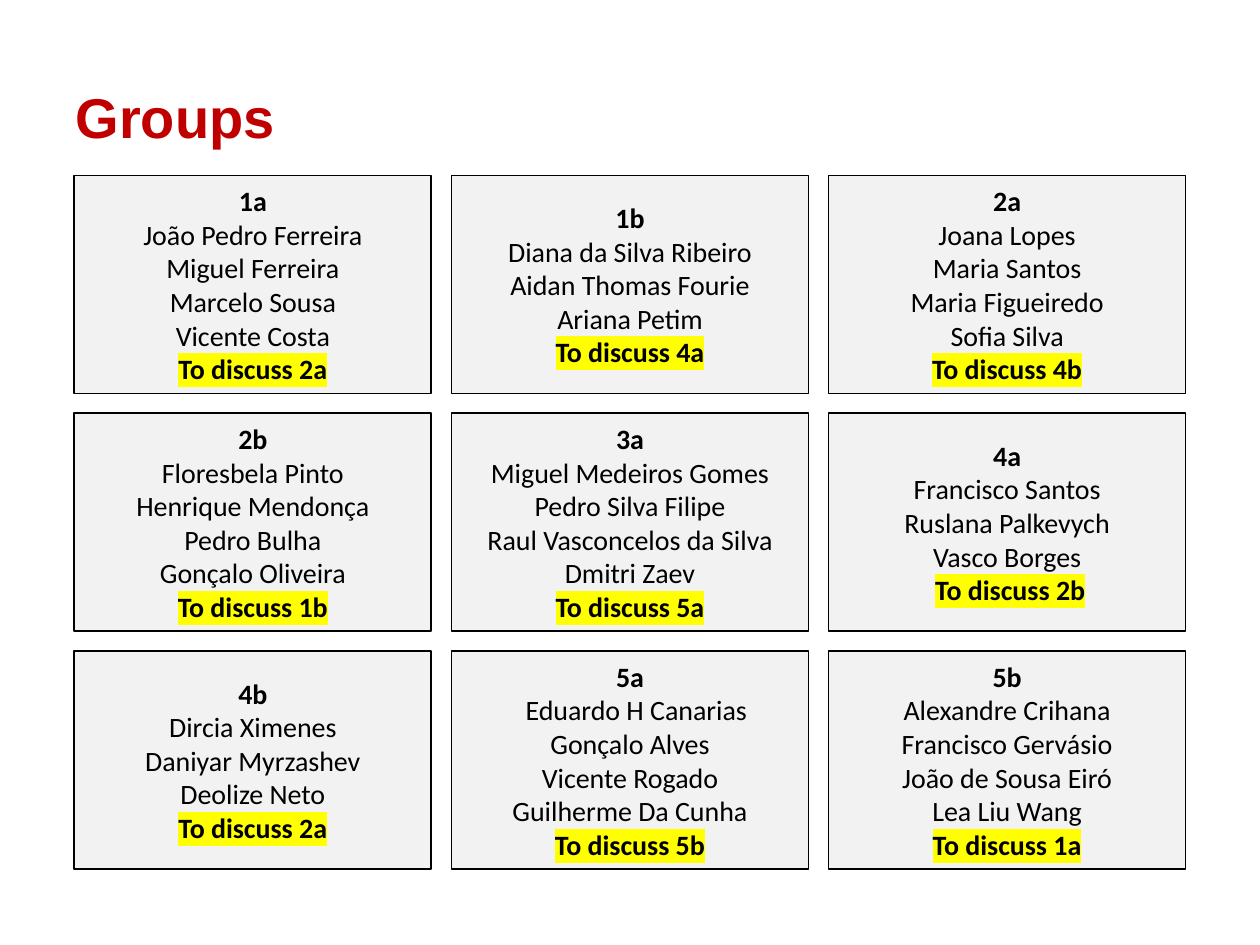
from lxml.etree import SubElement
from pptx import Presentation
from pptx.dml.color import RGBColor
from pptx.enum.shapes import MSO_SHAPE
from pptx.enum.text import MSO_ANCHOR, PP_ALIGN
from pptx.oxml.ns import qn
from pptx.util import Pt

TITLE = "Groups"
GROUPS = [
    ("1a", ["João Pedro Ferreira", "Miguel Ferreira", "Marcelo Sousa", "Vicente Costa"], "2a"),
    ("1b", ["Diana da Silva Ribeiro", "Aidan Thomas Fourie", "Ariana Petim"], "4a"),
    ("2a", ["Joana Lopes", "Maria Santos", "Maria Figueiredo", "Sofia Silva"], "4b"),
    ("2b", ["Floresbela Pinto", "Henrique Mendonça", "Pedro Bulha", "Gonçalo Oliveira"], "1b"),
    ("3a", ["Miguel Medeiros Gomes", "Pedro Silva Filipe", "Raul Vasconcelos da Silva",
            "Dmitri Zaev"], "5a"),
    ("4a", ["Francisco Santos", "Ruslana Palkevych", "Vasco Borges"], "2b"),
    ("4b", ["Dircia Ximenes", "Daniyar Myrzashev", "Deolize Neto"], "2a"),
    ("5a", ["Eduardo H Canarias", "Gonçalo Alves", "Vicente Rogado", "Guilherme Da Cunha"], "5b"),
    ("5b", ["Alexandre Crihana", "Francisco Gervásio", "João de Sousa Eiró", "Lea Liu Wang"], "1a"),
]
INDENTS = {"Eduardo H Canarias": 7.2, "To discuss 2b": 3.6}

RED = RGBColor(0xC0, 0x00, 0x00)
BLACK = RGBColor(0x00, 0x00, 0x00)
GREY = RGBColor(0xF2, 0xF2, 0xF2)
YELLOW = RGBColor(0xFF, 0xFF, 0x00)

COLUMNS = 3
LEFT, TOP = 42.5, 100.3
WIDTH, HEIGHT = 204, 124.6
GAP_X, GAP_Y = 11.5, 11.3


def format_run(r, font, size, color, bold):
    r.font.name = font
    r.font.size = Pt(size)
    r.font.bold = bold
    r.font.color.rgb = color


def highlight(r, color):
    rPr = r._r.get_or_add_rPr()
    mark = SubElement(rPr, qn("a:highlight"))
    SubElement(mark, qn("a:srgbClr")).set("val", str(color))
    rPr.find(qn("a:solidFill")).addnext(mark)


def add_group(s, index, name, members, topic):
    row, col = divmod(index, COLUMNS)
    sp = s.shapes.add_shape(
        MSO_SHAPE.RECTANGLE,
        Pt(LEFT + col * (WIDTH + GAP_X)), Pt(TOP + row * (HEIGHT + GAP_Y)),
        Pt(WIDTH), Pt(HEIGHT))
    sp.shadow.inherit = False
    sp.fill.solid()
    sp.fill.fore_color.rgb = GREY
    sp.line.color.rgb = BLACK
    sp.line.width = Pt(1)
    tf = sp.text_frame
    tf.word_wrap = True
    tf.vertical_anchor = MSO_ANCHOR.MIDDLE
    tf.text = "\n".join([name, *members, f"To discuss {topic}"])
    last = len(tf.paragraphs) - 1
    for i, p in enumerate(tf.paragraphs):
        p.alignment = PP_ALIGN.CENTER
        if p.text in INDENTS:
            p._p.get_or_add_pPr().set("marL", str(Pt(INDENTS[p.text])))
        format_run(p.runs[0], "Calibri", 16, BLACK, i in (0, last))
    highlight(tf.paragraphs[last].runs[0], YELLOW)


def add_title(s):
    title = s.shapes.title
    title.left, title.top, title.width, title.height = Pt(36), Pt(21.6), Pt(432), Pt(90)
    tf = title.text_frame
    tf.text = TITLE
    tf.vertical_anchor = MSO_ANCHOR.MIDDLE
    p = tf.paragraphs[0]
    p.alignment = PP_ALIGN.LEFT
    format_run(p.runs[0], "Arial", 32, RED, True)
    s.shapes._spTree.append(title._element)


def main():
    prs = Presentation()
    prs.slide_width, prs.slide_height = Pt(720), Pt(540)
    s = prs.slides.add_slide(prs.slide_layouts[5])
    for index, group in enumerate(GROUPS):
        add_group(s, index, *group)
    add_title(s)
    prs.save("out.pptx")


if __name__ == "__main__":
    main()
